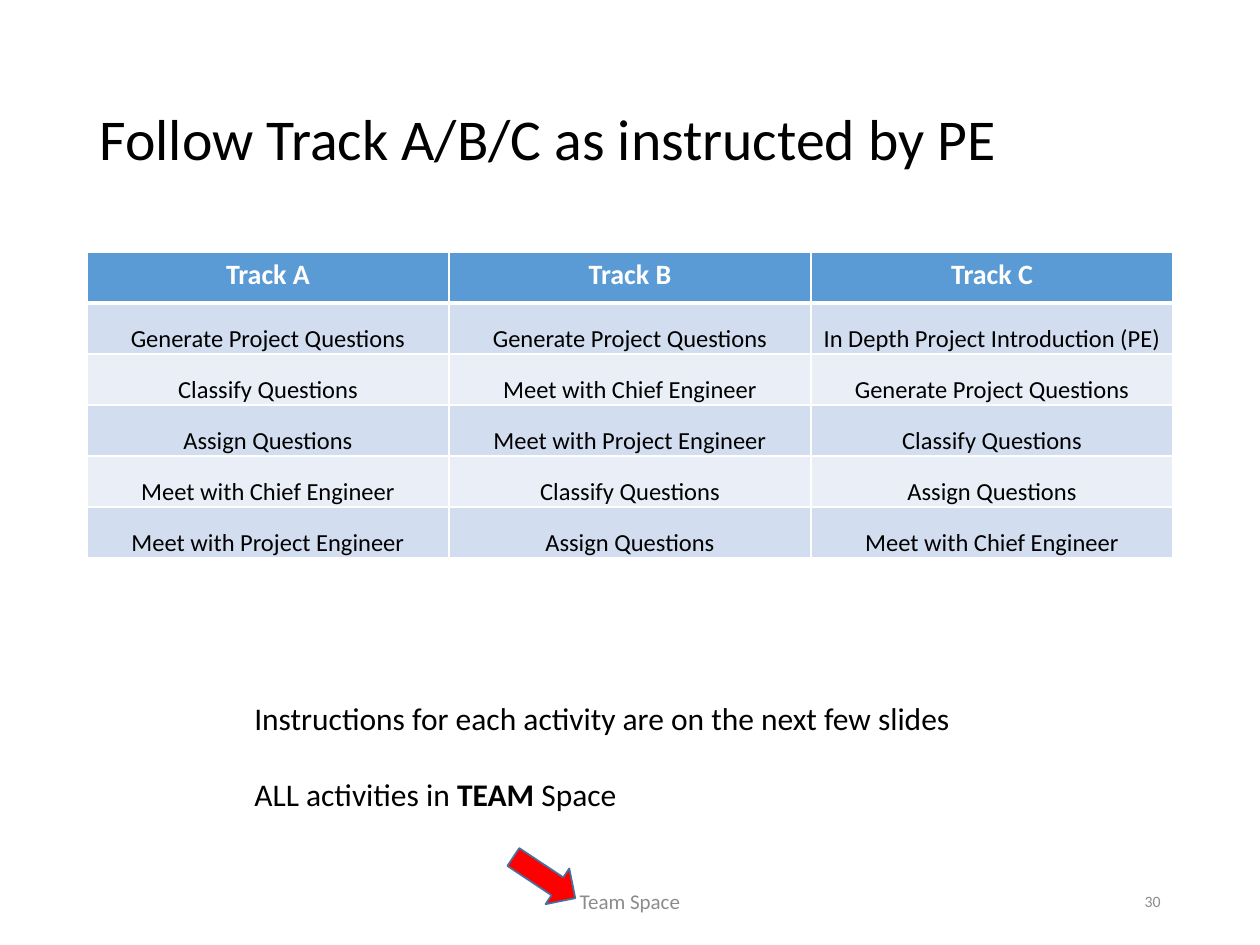
from lxml.etree import SubElement
from pptx import Presentation
from pptx.dml.color import RGBColor
from pptx.enum.shapes import MSO_SHAPE as Shape
from pptx.enum.text import MSO_ANCHOR as Anchor, MSO_AUTO_SIZE as AutoSize, PP_ALIGN as Align
from pptx.oxml.ns import qn
from pptx.util import Inches, Pt

TITLE = "Follow Track A/B/C as instructed by PE"
TRACKS = [
    ("Track A", "Track B", "Track C"),
    ("Generate Project Questions", "Generate Project Questions", "In Depth Project Introduction (PE)"),
    ("Classify Questions", "Meet with Chief Engineer", "Generate Project Questions"),
    ("Assign Questions", "Meet with Project Engineer", "Classify Questions"),
    ("Meet with Chief Engineer", "Classify Questions", "Assign Questions"),
    ("Meet with Project Engineer", "Assign Questions", "Meet with Chief Engineer"),
]
INSTRUCTIONS = [
    [("Instructions for each activity are on the next few slides", False)],
    [("ALL activities in ", False), ("TEAM", True), (" Space", False)],
]
FOOTERS = [
    ("Team Space", 3.31, 3.38, 12, Align.CENTER),
    ("30", 7.06, 2.25, 9, Align.RIGHT),
]
COLORS = {
    "text": "000000", "white": "FFFFFF", "header": "5B9BD5", "odd": "D2DEEF",
    "even": "EAEFF7", "footer": "8C8C8C", "arrow": "FF0000", "outline": "43739E",
}
WIDTH, HEIGHT = 10, 7.5
MARGIN = 0.69
CONTENT_WIDTH = WIDTH - 2 * MARGIN
ROW_HEIGHT = 0.405
BODY_CELL = {
    "vertical_anchor": Anchor.BOTTOM, "margin_left": Inches(0.01), "margin_right": Inches(0.01),
    "margin_top": Inches(0.01), "margin_bottom": 0,
}


def color(name):
    return RGBColor.from_string(COLORS[name])


def apply(target, values):
    for key, value in values.items():
        setattr(target, key, value)


def box(*lengths):
    return [Inches(length) for length in lengths]


def write(paragraph, text, size, ink="text", bold=False):
    run = paragraph.add_run()
    run.text = text
    apply(run.font, {"name": "Calibri", "size": Pt(size), "bold": bold})
    run.font.color.rgb = color(ink)


def add_borders(cell, bottom):
    properties = cell._tc.get_or_add_tcPr()
    for side, points in (("L", 1), ("R", 1), ("T", 1), ("B", bottom)):
        line = SubElement(properties, qn(f"a:ln{side}"), w=str(Pt(points)))
        SubElement(SubElement(line, qn("a:solidFill")), qn("a:srgbClr"), val=COLORS["white"])


def add_title(slide):
    title = slide.shapes.title
    left, top, width, height = box(MARGIN, 0.4, CONTENT_WIDTH, 1.45)
    apply(title, {"left": left, "top": top, "width": width, "height": height})
    title.text_frame.vertical_anchor = Anchor.MIDDLE
    paragraph = title.text_frame.paragraphs[0]
    apply(paragraph, {"alignment": Align.LEFT, "line_spacing": 0.9})
    write(paragraph, TITLE, 33)


def add_tracks(slide):
    rows, columns = len(TRACKS), len(TRACKS[0])
    frame = box(MARGIN, 2, CONTENT_WIDTH, ROW_HEIGHT * rows)
    table = slide.shapes.add_table(rows, columns, *frame).table
    for row, activities in enumerate(TRACKS):
        header = row == 0
        band = "header" if header else "odd" if row % 2 else "even"
        for column, activity in enumerate(activities):
            cell = table.cell(row, column)
            add_borders(cell, 3 if header else 1)
            cell.fill.solid()
            cell.fill.fore_color.rgb = color(band)
            if not header:
                apply(cell, BODY_CELL)
            paragraph = cell.text_frame.paragraphs[0]
            paragraph.alignment = Align.CENTER
            write(paragraph, activity, 16 if header else 14, "white" if header else "text", header)


def add_footers(slide):
    for text, left, width, size, alignment in FOOTERS:
        frame = slide.shapes.add_textbox(*box(left, 6.95, width, 0.4)).text_frame
        apply(frame, {"word_wrap": True, "vertical_anchor": Anchor.MIDDLE})
        paragraph = frame.paragraphs[0]
        paragraph.alignment = alignment
        write(paragraph, text, size, "footer")


def add_instructions(slide):
    frame = slide.shapes.add_textbox(*box(1.92, 5.5, 5.91, 1.01)).text_frame
    apply(frame, {"word_wrap": False, "auto_size": AutoSize.SHAPE_TO_FIT_TEXT})
    for index, runs in enumerate(INSTRUCTIONS):
        paragraph = frame.add_paragraph() if index else frame.paragraphs[0]
        paragraph.space_before = Pt(22 * index)
        for text, bold in runs:
            write(paragraph, text, 18, bold=bold)


def add_arrow(slide):
    arrow = slide.shapes.add_shape(Shape.DOWN_ARROW, *box(4.15, 6.67, 0.34, 0.59))
    arrow.rotation = 303.6
    arrow.shadow.inherit = False
    arrow.fill.solid()
    arrow.fill.fore_color.rgb = color("arrow")
    arrow.line.color.rgb = color("outline")
    arrow.line.width = Pt(1)


def main():
    deck = Presentation()
    apply(deck, {"slide_width": Inches(WIDTH), "slide_height": Inches(HEIGHT)})
    slide = deck.slides.add_slide(deck.slide_layouts.get_by_name("Title Only"))
    for add_part in (add_title, add_tracks, add_footers, add_instructions, add_arrow):
        add_part(slide)
    deck.save("out.pptx")


if __name__ == "__main__":
    main()
